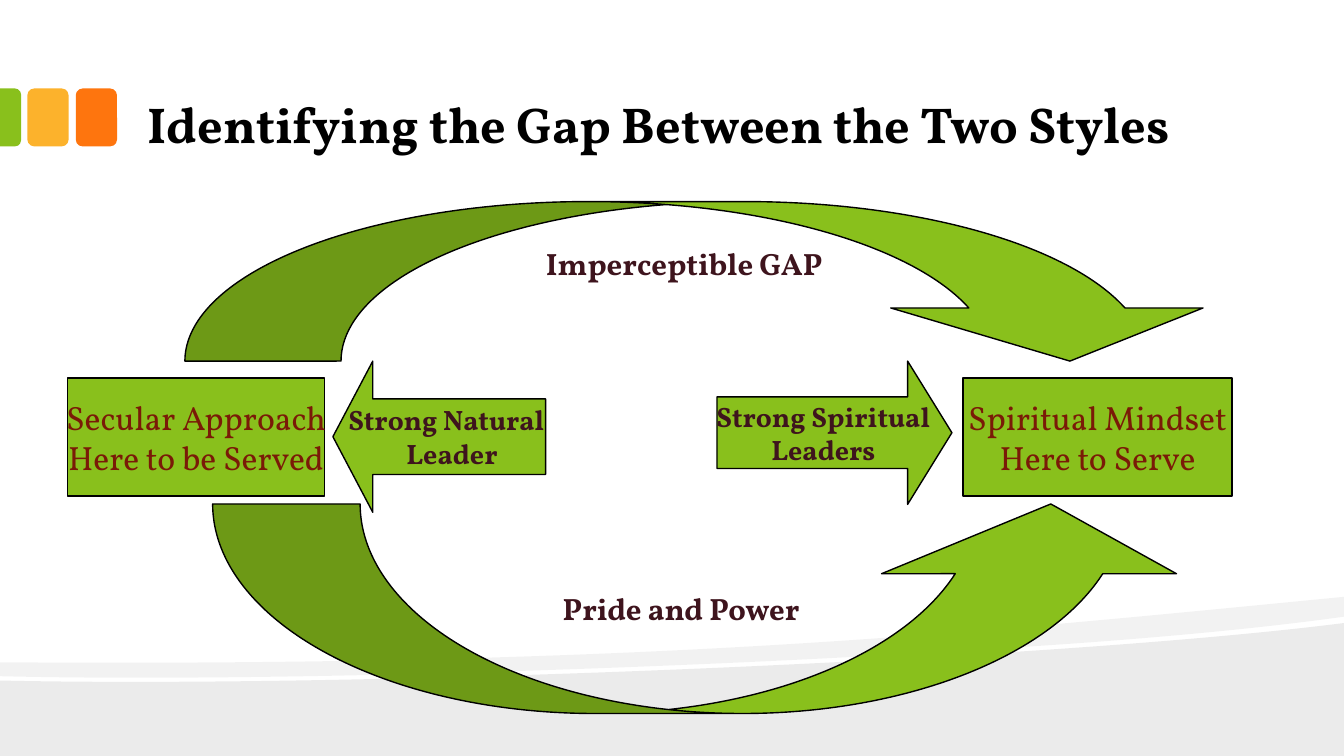
from lxml import etree
from pptx import Presentation
from pptx import util as u
from pptx.dml.color import RGBColor
from pptx.enum import shapes, text
from pptx.oxml import ns

FONT = "Vollkorn"
GREEN, AMBER, ORANGE = "89C01C", "FCB22C", "FE750E"
BLACK, RUST, MAROON = "000000", "7A1A07", "3E141D"
SHAPE = shapes.MSO_SHAPE


def paint(target, color):
    """Give a fill a solid colour from a hex string."""
    target.solid()
    target.fore_color.rgb = RGBColor.from_string(color)


def style_text(frame, size, color, bold, align):
    """Format every run of a text frame."""
    for paragraph in frame.paragraphs:
        paragraph.alignment = align
        for run in paragraph.runs:
            run.font.name = FONT
            run.font.size = u.Pt(size)
            run.font.bold = bold
            run.font.color.rgb = RGBColor.from_string(color)


def add_block(slide, kind, box, color):
    """Add a preset shape without line or shadow; box is in centimetres."""
    block = slide.shapes.add_shape(kind, *map(u.Cm, box))
    block.shadow.inherit = False
    paint(block.fill, color)
    block.line.fill.background()
    return block


def bend_segments(outline, starts):
    """Merge each three segments from the given indices into one cubic curve."""
    segments = list(outline._element.iter(ns.qn("a:lnTo")))
    for start in starts:
        curve = etree.Element(ns.qn("a:cubicBezTo"))
        segments[start].addprevious(curve)
        for segment in segments[start:start + 3]:
            curve.append(segment[0])
            segment.getparent().remove(segment)


def add_waves(slide, box):
    """Draw the two translucent waves along the bottom of the slide."""
    left, top, width, height = box
    ground = [(width, height), (0, height), (0, 2.11),
              (8.94, 2.31), (26.47, 1.6), (width, 0.66)]
    ribbon = [(width, 0.5), (31.88, 0.78), (29.18, 1.04), (26.14, 1.24),
              (17.73, 1.8), (6.55, 2.16), (0, 2),
              (0, 1.65), (16.56, 1.77), (24.66, 0.89), (width, 0)]
    for outline, curves, opacity in ((ground, (2,), 8), (ribbon, (0, 3, 7), 5)):
        points = [(u.Cm(left + x), u.Cm(top + y)) for x, y in outline]
        builder = slide.shapes.build_freeform(*points[0], scale=1.0)
        builder.add_line_segments(points[1:], close=True)
        wave = builder.convert_to_shape()
        bend_segments(wave, curves)
        wave.shadow.inherit = False
        paint(wave.fill, BLACK)
        wave.line.fill.background()
        shade = wave.fill._xPr.find(ns.qn("a:solidFill"))[0]
        etree.SubElement(shade, ns.qn("a:alpha"), val=str(opacity * 1000))


def add_tabs(slide, box):
    """Draw the three coloured tabs at the left edge."""
    left, top, width, height = box
    tab_width, pitch, edge_width = 1.04, 1.22, 0.53
    for index, color in enumerate((ORANGE, AMBER)):
        tab_left = left + width - tab_width - index * pitch
        add_block(slide, SHAPE.ROUNDED_RECTANGLE,
                  (tab_left, top, tab_width, height), color)
    edge = add_block(
        slide, SHAPE.ROUND_2_SAME_RECTANGLE,
        (left + (edge_width - height) / 2, top + (height - edge_width) / 2,
         height, edge_width), GREEN)
    edge.adjustments[0] = 0.29
    edge.rotation = 90


def add_title(slide, box, wording):
    """Place and format the title placeholder."""
    title = slide.shapes.title
    title.left, title.top, title.width, title.height = map(u.Cm, box)
    frame = title.text_frame
    frame.text = wording
    frame.word_wrap = True
    frame.auto_size = text.MSO_AUTO_SIZE.NONE
    frame.vertical_anchor = text.MSO_ANCHOR.BOTTOM
    frame.margin_left = frame.margin_right = u.Cm(0.34)
    frame.margin_top = frame.margin_bottom = u.Cm(0.18)
    style_text(frame, 36, BLACK, True, text.PP_ALIGN.LEFT)


def add_cycle(slide, box):
    """Draw the two mindsets and the arrows between them."""
    left, top, width, height = box
    mindset_top, mindset_height, leader_top = 4.45, 2.97, 4.02
    parts = (
        (SHAPE.RECTANGLE, (0, mindset_top, 6.48, mindset_height), (),
         "Secular Approach\nHere to be Served", 24, RUST, (0, 0)),
        (SHAPE.RECTANGLE, (width - 6.78, mindset_top, 6.78, mindset_height), (),
         "Spiritual Mindset\nHere to Serve", 24, RUST, (0, 0)),
        (SHAPE.CURVED_UP_ARROW, (3.66, height - 5.28, 24.84, 5.28),
         (0.704, 1.408, 0.333), "Pride and Power", 22, MAROON, (1.23, 0)),
        (SHAPE.CURVED_DOWN_ARROW, (2.96, 0, 26.24, 4.02),
         (0.979, 1.958, 0.333), "Imperceptible GAP", 22, MAROON, (1.07, 0.9)),
        (SHAPE.LEFT_ARROW, (6.69, leader_top, 5.36, 3.81), (0.5, 0.264),
         "Strong Natural \n Leader", 20, MAROON, (0, 0)),
        (SHAPE.RIGHT_ARROW, (16.37, leader_top, 5.92, 3.61), (0.5, 0.309),
         "Strong Spiritual\nLeaders", 20, MAROON, (0, 0)),
    )
    for kind, (x, y, w, h), bends, wording, size, color, (right, bottom) in parts:
        part = add_block(slide, kind, (left + x, top + y, w, h), GREEN)
        paint(part.line.fill, BLACK)
        part.line.width = u.Pt(1)
        for index, bend in enumerate(bends):
            part.adjustments[index] = bend
        frame = part.text_frame
        frame.text = wording
        frame.word_wrap = right > 0
        frame.vertical_anchor = text.MSO_ANCHOR.MIDDLE
        frame.margin_right = u.Cm(0.25 + right)
        frame.margin_bottom = u.Cm(0.13 + bottom)
        style_text(frame, size, color, color == MAROON, text.PP_ALIGN.CENTER)


def main():
    """Build the slide and save it."""
    deck = Presentation()
    deck.slide_width, deck.slide_height = u.Cm(33.87), u.Cm(19.05)
    slide = deck.slides.add_slide(deck.slide_layouts.get_by_name("Title Only"))
    paint(slide.background.fill, "FFFFFF")
    add_waves(slide, (0, 15.04, 33.87, 4.01))
    add_tabs(slide, (0, 2.23, 2.95, 1.46))
    add_title(slide, (3.38, 0.43, 27.08, 3.61),
              "Identifying the Gap Between the Two Styles")
    add_cycle(slide, (1.7, 5.08, 29.35, 12.9))
    deck.save("out.pptx")


if __name__ == "__main__":
    main()
